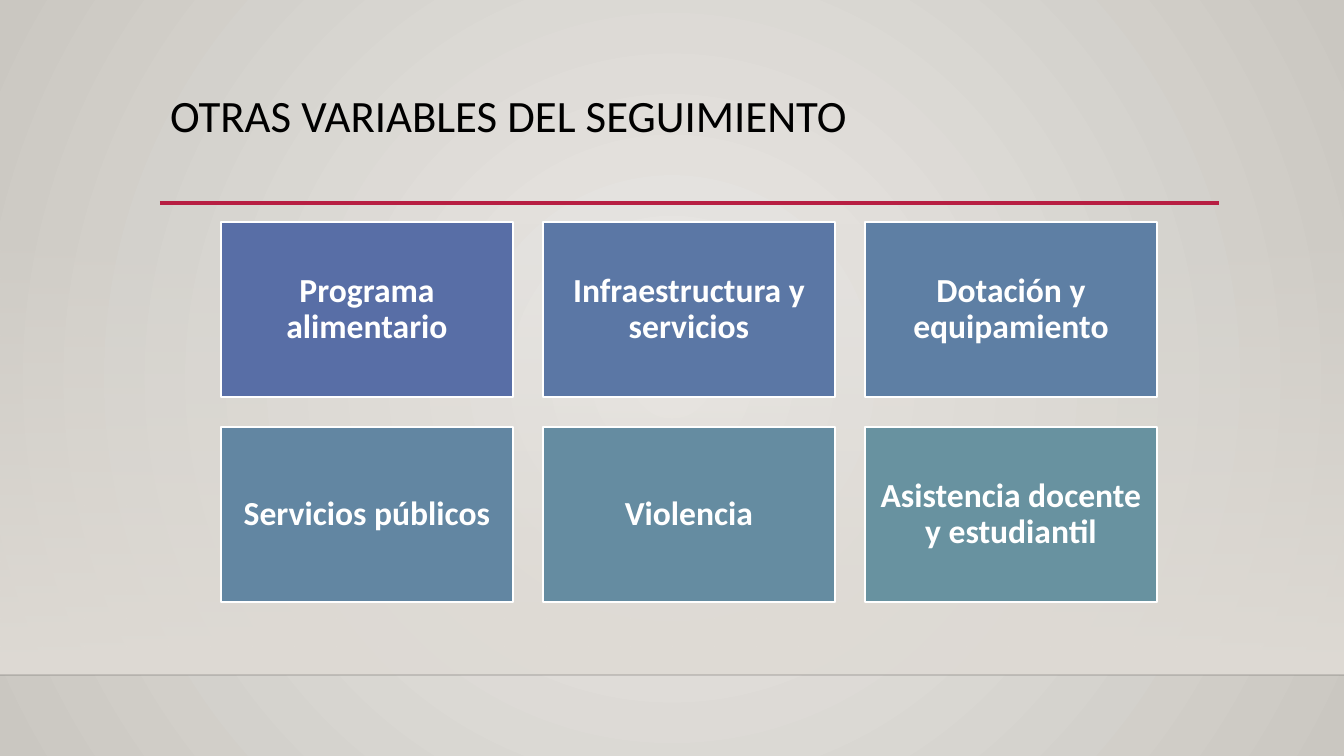
from dataclasses import dataclass
from typing import Any

from lxml import etree
from pptx import Presentation
from pptx import util as u
from pptx.dml.color import RGBColor
from pptx.enum import shapes, text
from pptx.oxml.ns import qn

EMU_PER_PX = 914400 / 100.8
SLIDE_WIDTH, SLIDE_HEIGHT = 1344, 756
COLUMNS = 3
CARD_LEFT, CARD_TOP = 221, 222
CARD_WIDTH, CARD_HEIGHT = 292, 175
COLUMN_STEP, ROW_STEP = 322, 205


@dataclass
class Card:
    label: str
    fill: str


@dataclass
class Rule:
    left: int
    right: int
    y: int
    color: str
    width: float
    opacity: int = 100


CARDS = [
    Card("Programa alimentario", "586EA6"),
    Card("Infraestructura y servicios", "5B77A5"),
    Card("Dotación y equipamiento", "5E7FA4"),
    Card("Servicios públicos", "6286A2"),
    Card("Violencia", "658CA1"),
    Card("Asistencia docente y estudiantil", "6892A0"),
]
RULES = [
    Rule(0, SLIDE_WIDTH, 675, "000001", 1, 20),
    Rule(160, 1219, 203, "B71E42", 2.5),
]
TITLE_FONT = {"name": "Calibri", "size": u.Pt(32), "bold": False}
CARD_FONT = {"name": "Calibri", "size": u.Pt(24), "bold": True}


def px(length: int) -> int:
    return round(length * EMU_PER_PX)


def rgb(color: str) -> RGBColor:
    return RGBColor.from_string(color)


def box(left: int, top: int, width: int, height: int) -> tuple[int, ...]:
    return tuple(map(px, (left, top, width, height)))


def set_opacity(color_element: Any, percent: int) -> None:
    etree.SubElement(color_element, qn("a:alpha")).set("val", str(percent * 1000))


def set_gradient(fill: Any, start: str, end: str) -> None:
    fill.gradient()
    for stop, color in zip(fill.gradient_stops, (start, end)):
        stop.color.rgb = rgb(color)


def write(frame: Any, words: str, align: Any, anchor: Any, font: dict, color: str) -> None:
    frame.text = words
    frame.word_wrap = True
    frame.auto_size = text.MSO_AUTO_SIZE.NONE
    frame.vertical_anchor = anchor
    paragraph = frame.paragraphs[0]
    paragraph.alignment = align
    paragraph.line_spacing = 0.9
    run_font = paragraph.runs[0].font
    for attribute, value in font.items():
        setattr(run_font, attribute, value)
    run_font.color.rgb = rgb(color)


def paint_background(slide: Any) -> None:
    set_gradient(slide.background.fill, "ECEAE7", "CAC7C1")
    gradient = slide.element.find(".//" + qn("a:gradFill"))
    gradient.remove(gradient.find(qn("a:lin")))
    radial = etree.SubElement(gradient, qn("a:path"))
    radial.set("path", "circle")
    center = etree.SubElement(radial, qn("a:fillToRect"))
    for side in "ltrb":
        center.set(side, "50000")


def add_wall(slide: Any) -> None:
    wall = slide.shapes.add_shape(
        shapes.MSO_SHAPE.RECTANGLE, *box(0, 223, SLIDE_WIDTH, 452))
    wall.shadow.inherit = False
    wall.line.fill.background()
    set_gradient(wall.fill, "DFDBD5", "DFDBD5")
    wall.fill.gradient_angle = 270
    set_opacity(wall.element.find(".//" + qn("a:srgbClr")), 0)


def add_rule(slide: Any, rule: Rule) -> None:
    line = slide.shapes.add_connector(
        shapes.MSO_CONNECTOR.STRAIGHT, *box(rule.left, rule.y, rule.right, rule.y))
    line.line.color.rgb = rgb(rule.color)
    line.line.width = u.Pt(rule.width)
    if rule.opacity < 100:
        set_opacity(line.element.find(".//" + qn("a:srgbClr")), rule.opacity)
    etree.SubElement(line.element.spPr, qn("a:effectLst"))


def add_title(slide: Any) -> None:
    title = slide.shapes.title
    title.left, title.top, title.width, title.height = box(160, 89, 1058, 116)
    write(title.text_frame, "OTRAS VARIABLES DEL SEGUIMIENTO", text.PP_ALIGN.LEFT,
          text.MSO_ANCHOR.TOP, TITLE_FONT, "000000")


def add_card(slide: Any, index: int, card: Card) -> None:
    row, column = divmod(index, COLUMNS)
    tile = slide.shapes.add_shape(
        shapes.MSO_SHAPE.RECTANGLE,
        *box(CARD_LEFT + column * COLUMN_STEP, CARD_TOP + row * ROW_STEP,
             CARD_WIDTH, CARD_HEIGHT))
    tile.shadow.inherit = False
    tile.fill.solid()
    tile.fill.fore_color.rgb = rgb(card.fill)
    tile.line.color.rgb = rgb("FFFFFF")
    tile.line.width = u.Pt(1.25)
    for side in ("left", "top", "right", "bottom"):
        setattr(tile.text_frame, f"margin_{side}", px(10))
    write(tile.text_frame, card.label, text.PP_ALIGN.CENTER,
          text.MSO_ANCHOR.MIDDLE, CARD_FONT, "FFFFFF")


def main() -> None:
    deck = Presentation()
    deck.slide_width, deck.slide_height = px(SLIDE_WIDTH), px(SLIDE_HEIGHT)
    slide = deck.slides.add_slide(deck.slide_layouts.get_by_name("Title Only"))
    paint_background(slide)
    add_wall(slide)
    for rule in RULES:
        add_rule(slide, rule)
    add_title(slide)
    for index, card in enumerate(CARDS):
        add_card(slide, index, card)
    deck.save("out.pptx")


if __name__ == "__main__":
    main()
